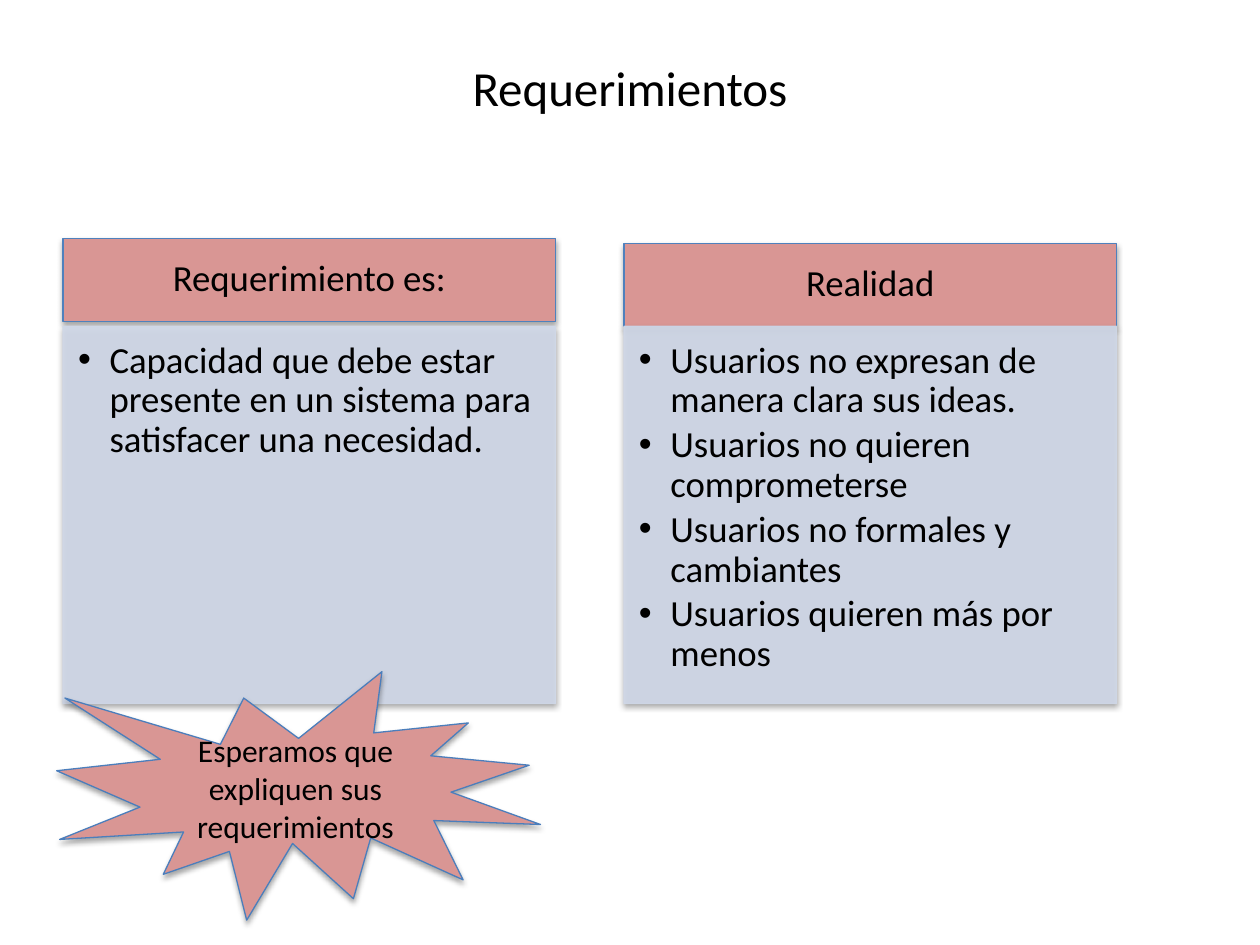
from lxml import etree
from pptx import Presentation
from pptx import util as u
from pptx.dml.color import RGBColor
from pptx.enum import shapes, text
from pptx.oxml.ns import qn

COLORS = {"text": "000000", "accent": "D99694", "header_line": "4F81BD",
          "seal_line": "4B7EBC", "panel": "D0D8E8", "shadow": "000000"}
LEFT, CENTER = text.PP_ALIGN.LEFT, text.PP_ALIGN.CENTER
TOP, MIDDLE = text.MSO_ANCHOR.TOP, text.MSO_ANCHOR.MIDDLE


class SlideBuilder:
    """Hold the style and the current slide, and draw each kind of element."""

    def __init__(self, presentation, font="Calibri"):
        self.slide = presentation.slides.add_slide(presentation.slide_layouts[6])
        self.font = font

    def color(self, name):
        return RGBColor.from_string(COLORS[name])

    def set_alpha(self, color_element, percent):
        etree.SubElement(color_element, qn("a:alpha")).set("val", str(percent * 1000))

    def set_text(self, shape, lines, size, align=CENTER, anchor=MIDDLE,
                 margins=(7.2, 3.6, 7.2, 3.6), spacing=1.0, after=0):
        frame = shape.text_frame
        frame.text = "\n".join(lines)
        frame.word_wrap = True
        frame.vertical_anchor = anchor
        (frame.margin_left, frame.margin_top,
         frame.margin_right, frame.margin_bottom) = map(u.Pt, margins)
        for paragraph in frame.paragraphs:
            paragraph.alignment = align
            paragraph.line_spacing = spacing
            paragraph.space_after = u.Pt(after)
            for run in paragraph.runs:
                run.font.name = self.font
                run.font.size = u.Pt(size)
                run.font.color.rgb = self.color("text")

    def title(self, box, caption):
        shape = self.slide.shapes.add_textbox(*map(u.Pt, box))
        self.set_text(shape, [caption], 28, margins=(7.2, 3.6, 7.2, 37.6))

    def block(self, kind, box, fill, line, opacity=100):
        shape = self.slide.shapes.add_shape(kind, *map(u.Pt, box))
        shape.fill.solid()
        shape.fill.fore_color.rgb = self.color(fill)
        shape.line.color.rgb = self.color(line)
        shape.line.width = u.Pt(0.75)
        properties = shape._element.spPr
        if opacity < 100:
            for color_element in list(properties.iter(qn("a:srgbClr"))):
                self.set_alpha(color_element, opacity)
        shape.shadow.inherit = False
        shadow = etree.SubElement(properties.find(qn("a:effectLst")), qn("a:outerShdw"),
                                  blurRad=str(u.Pt(3.1)), dist=str(u.Pt(1.8)),
                                  dir="5400000", rotWithShape="0")
        shadow_color = etree.SubElement(shadow, qn("a:srgbClr"), val=COLORS["shadow"])
        self.set_alpha(shadow_color, 35)
        return shape

    def header(self, box, caption):
        shape = self.block(shapes.MSO_SHAPE.RECTANGLE, box, "accent", "header_line")
        self.set_text(shape, [caption], 21, margins=(11.5, 6.5, 11.5, 6.5), spacing=0.9)

    def bullet_panel(self, box, items):
        shape = self.block(shapes.MSO_SHAPE.RECTANGLE, box, "panel", "panel", 90)
        self.set_text(shape, items, 21, LEFT, TOP, (8.6, 8.6, 11.5, 13), 0.9, 3)
        for paragraph in shape.text_frame.paragraphs:
            properties = paragraph._p.get_or_add_pPr()
            properties.set("marL", str(u.Pt(18)))
            properties.set("indent", str(u.Pt(-18)))
            etree.SubElement(properties, qn("a:buFont"), typeface="Arial")
            etree.SubElement(properties, qn("a:buChar"), char="•")

    def seal(self, box, caption):
        shape = self.block(shapes.MSO_SHAPE.EXPLOSION1, box, "accent", "seal_line")
        self.set_text(shape, [caption], 18)


def main():
    presentation = Presentation()
    presentation.slide_width, presentation.slide_height = u.Pt(720), u.Pt(540)
    builder = SlideBuilder(presentation)
    builder.title((36, 21.6, 648, 90), "Requerimientos")

    width = 281.5
    columns = [
        (36, 136.2, "Requerimiento es:",
         ["Capacidad que debe estar presente en un sistema para satisfacer una necesidad."]),
        (356.5, 139, "Realidad",
         ["Usuarios no expresan de manera clara sus ideas.",
          "Usuarios no quieren comprometerse",
          "Usuarios no formales y cambiantes",
          "Usuarios quieren más por menos"]),
    ]
    for left, header_top, caption, items in columns:
        builder.header((left, header_top, width, 47.5), caption)
        builder.bullet_panel((left, 186.5, width, 215.5), items)

    builder.seal((32.4, 383.8, 276.5, 142), "Esperamos que expliquen sus requerimientos")
    presentation.save("out.pptx")


if __name__ == "__main__":
    main()
